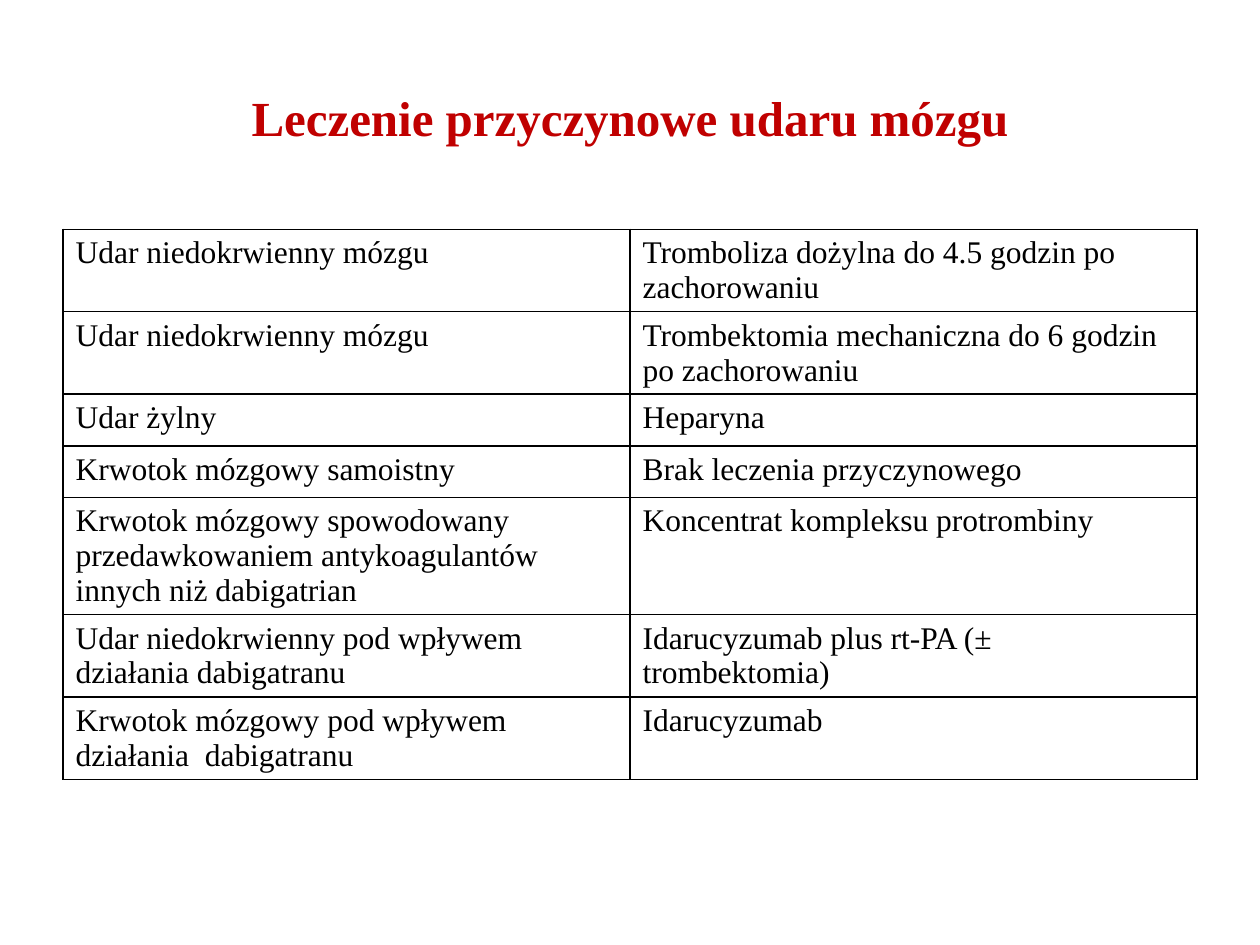
import pptx
import pptx.util
import pptx.dml.color
import pptx.enum.text
import pptx.oxml
import pptx.oxml.ns

RED = pptx.dml.color.RGBColor(0xC0, 0x00, 0x00)
BLACK = pptx.dml.color.RGBColor(0x00, 0x00, 0x00)

ROWS = [
    ("Udar niedokrwienny mózgu",
     "Tromboliza dożylna do 4.5 godzin po zachorowaniu"),
    ("Udar niedokrwienny mózgu",
     "Trombektomia mechaniczna do 6 godzin po zachorowaniu"),
    ("Udar żylny", "Heparyna"),
    ("Krwotok mózgowy samoistny", "Brak leczenia przyczynowego"),
    ("Krwotok mózgowy spowodowany przedawkowaniem antykoagulantów "
     "innych niż dabigatrian",
     "Koncentrat kompleksu protrombiny"),
    ("Udar niedokrwienny pod wpływem działania dabigatranu",
     "Idarucyzumab plus rt-PA (± trombektomia)"),
    ("Krwotok mózgowy pod wpływem działania  dabigatranu",
     "Idarucyzumab"),
]


class Deck:
    """Holds the style and the current slide; lengths are shares of its size."""
    font = "Times New Roman"

    def __init__(self, wide, high):
        self.prs = pptx.Presentation()
        self.prs.slide_width = pptx.util.Inches(wide)
        self.prs.slide_height = pptx.util.Inches(high)
        self.slide = self.prs.slides.add_slide(self.prs.slide_layouts[5])

    def box(self, left, top, width, height):
        wide, high = self.prs.slide_width, self.prs.slide_height
        return (round(left * wide), round(top * high),
                round(width * wide), round(height * high))

    def text(self, para, words, size, color, bold=False):
        run = para.add_run()
        run.text = words
        run.font.name = self.font
        run.font.size = pptx.util.Pt(size)
        run.font.bold = bold
        run.font.color.rgb = color

    def title(self, words, *area):
        shape = self.slide.shapes.title
        shape.left, shape.top, shape.width, shape.height = self.box(*area)
        frame = shape.text_frame
        frame.vertical_anchor = pptx.enum.text.MSO_ANCHOR.MIDDLE
        para = frame.paragraphs[0]
        para.alignment = pptx.enum.text.PP_ALIGN.CENTER
        self.text(para, words, 28, RED, True)

    def border(self, cell, color, width=1):
        props = cell._tc.get_or_add_tcPr()
        space = pptx.oxml.ns.nsdecls("a")
        for at, side in enumerate(("lnL", "lnR", "lnT", "lnB")):
            props.insert(at, pptx.oxml.parse_xml(
                f'<a:{side} {space} w="{pptx.util.Pt(width)}"><a:solidFill>'
                f'<a:srgbClr val="{color}"/></a:solidFill></a:{side}>'))

    def table(self, rows, *area):
        grid = self.slide.shapes.add_table(
            len(rows), len(rows[0]), *self.box(*area)).table
        grid.first_row = grid.horz_banding = False
        for r, row in enumerate(rows):
            for c, words in enumerate(row):
                cell = grid.cell(r, c)
                cell.fill.background()
                self.border(cell, BLACK)
                self.text(cell.text_frame.paragraphs[0], words, 18, BLACK)


def main():
    deck = Deck(10, 7.5)
    # Heading
    deck.title("Leczenie przyczynowe udaru mózgu", 0.05, 0.04, 0.9, 1 / 6)
    # Causes and treatments; rows grow with their text
    row = 0.41 / 7.5
    deck.table(ROWS, 0.05, 1.82 / 7.5, 0.9, row * len(ROWS))
    deck.prs.save("out.pptx")


if __name__ == "__main__":
    main()
